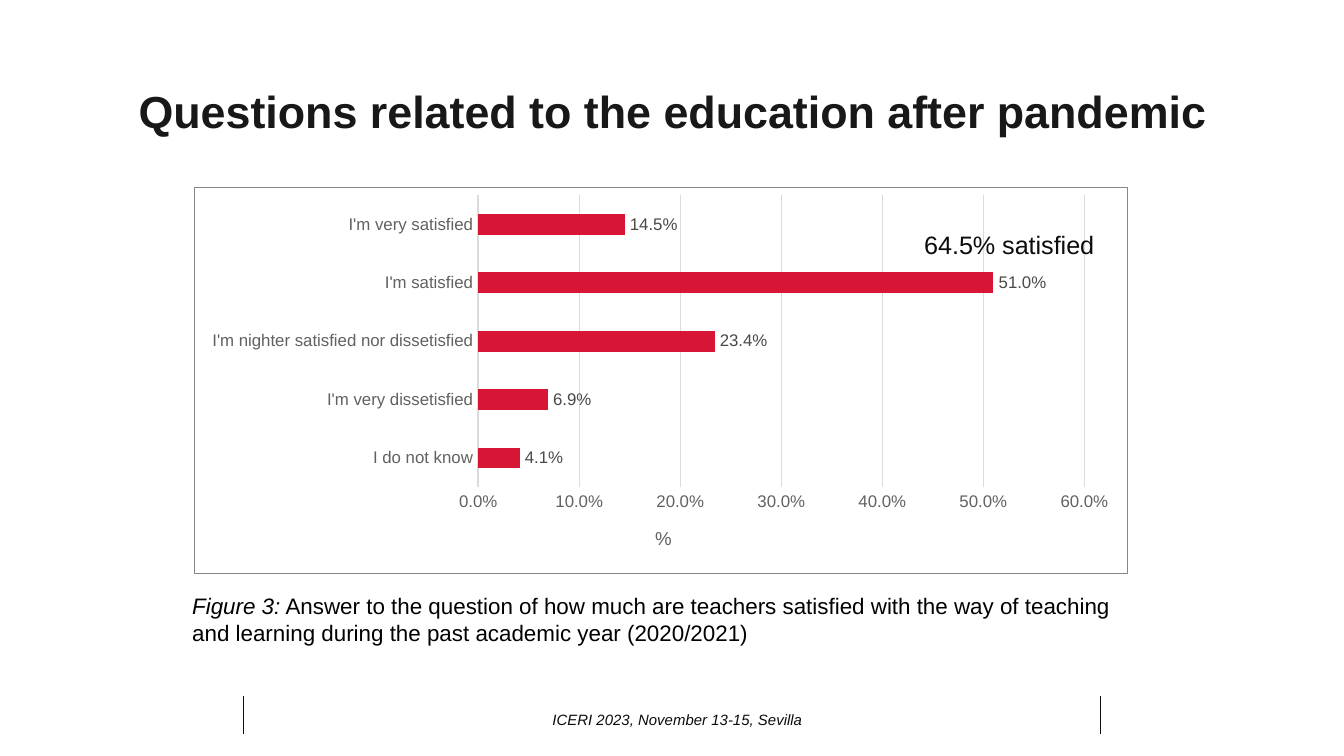
"""Build the slide on teacher satisfaction after the pandemic."""
from lxml import etree
from pptx import Presentation
from pptx.chart.data import CategoryChartData
from pptx.dml.color import RGBColor
from pptx.enum.chart import XL_CHART_TYPE as ChartType
from pptx.enum.chart import XL_LABEL_POSITION as LabelPosition
from pptx.enum.chart import XL_TICK_MARK as TickMark
from pptx.enum.shapes import MSO_CONNECTOR as Connector
from pptx.enum.text import MSO_ANCHOR as Anchor
from pptx.enum.text import PP_ALIGN as Align
from pptx.oxml import parse_xml
from pptx.oxml.ns import nsdecls, qn
from pptx.util import Pt

SCALE = 914400 / 134.4
INK, GREY, GRID = "0C0C0C", "616161", "DBDBDB"


def color(value):
    return RGBColor.from_string(value)


def write(shape, runs, box, size, ink=INK, bold=False, align=Align.LEFT, anchor=Anchor.TOP, spacing=None):
    shape.left, shape.top, shape.width, shape.height = [round(n * SCALE) for n in box]
    frame = shape.text_frame
    frame.word_wrap = True
    frame.vertical_anchor = anchor
    paragraph = frame.paragraphs[0]
    paragraph.alignment = align
    paragraph.line_spacing = spacing
    for text, italic in runs:
        run = paragraph.add_run()
        run.text = text
        font = run.font
        font.name, font.size, font.bold, font.italic = "Arial", Pt(size), bold, italic
        font.color.rgb = color(ink)


presentation = Presentation()
presentation.slide_width = round(1344 * SCALE)
presentation.slide_height = round(756 * SCALE)
slide = presentation.slides.add_slide(presentation.slide_layouts[5])
shapes = slide.shapes

for x in (243, 1101):
    line = shapes.add_connector(Connector.STRAIGHT, *[round(n * SCALE) for n in (x, 696, x, 734)])
    line.line.color.rgb = color(INK)
    line.line.width = Pt(0.5)
    etree.SubElement(line._element.spPr, qn("a:effectLst"))

write(shapes.title, [("Questions related to the education after pandemic", False)], (93, 40, 1159, 147), 24,
      ink="181818", bold=True, align=Align.CENTER, anchor=Anchor.MIDDLE, spacing=0.9)
write(shapes.add_textbox(0, 0, 0, 0), [("ICERI 2023, November 13-15, Sevilla", True)], (301, 700, 753, 40), 8,
      align=Align.CENTER, anchor=Anchor.MIDDLE)

answers = {
    "I do not know": 0.041,
    "I'm very dissetisfied": 0.069,
    "I'm nighter satisfied nor dissetisfied": 0.234,
    "I'm satisfied": 0.51,
    "I'm very satisfied": 0.145,
}
data = CategoryChartData(number_format="0.0%")
data.categories = list(answers)
data.add_series("Series 1", list(answers.values()))
chart_box = [round(n * SCALE) for n in (194, 187, 934, 387)]
chart = shapes.add_chart(ChartType.BAR_CLUSTERED, *chart_box, data).chart
chart.has_legend = False
chart.has_title = False
chart.font.name = "Arial"
chart.font.size = Pt(10)
chart.font.color.rgb = color(INK)

plot = chart.plots[0]
plot.gap_width = 182
plot.vary_by_categories = False
bars = plot.series[0].format.fill
bars.solid()
bars.fore_color.rgb = color("D71635")
plot.has_data_labels = True
labels = plot.data_labels
labels.show_value = True
labels.position = LabelPosition.OUTSIDE_END
labels.number_format = "0.0%"
labels.number_format_is_linked = False

category_axis, value_axis = chart.category_axis, chart.value_axis
for axis in (category_axis, value_axis):
    axis.major_tick_mark = axis.minor_tick_mark = TickMark.NONE
for font, ink in ((category_axis.tick_labels.font, GREY), (value_axis.tick_labels.font, GREY),
                  (labels.font, "494949")):
    font.name, font.size = "Arial", Pt(9)
    font.color.rgb = color(ink)
category_axis.has_major_gridlines = False
value_axis.has_major_gridlines = True
for stroke in (category_axis.format.line, value_axis.major_gridlines.format.line):
    stroke.color.rgb = color(GRID)
    stroke.width = Pt(0.75)
value_axis.format.line.fill.background()
value_axis.minimum_scale, value_axis.maximum_scale, value_axis.major_unit = 0, 0.6, 0.1
value_axis.tick_labels.number_format = "0.0%"
value_axis.tick_labels.number_format_is_linked = False

axis_title = value_axis.axis_title
axis_title.text_frame.text = "%"
title_font = axis_title.text_frame.paragraphs[0].runs[0].font
title_font.name, title_font.size, title_font.bold = "Arial", Pt(10), False
title_font.color.rgb = color(GREY)

chart_space = chart._chartSpace
plot_layout = '<c:layoutTarget val="inner"/><c:xMode val="edge"/><c:yMode val="edge"/>' \
    '<c:x val="0.304"/><c:y val="0.02"/><c:w val="0.65"/><c:h val="0.757"/>'
title_layout = '<c:xMode val="edge"/><c:yMode val="edge"/><c:x val="0.49"/><c:y val="0.87"/>'
for parent, index, content in ((chart_space.chart.plotArea, 0, plot_layout),
                               (axis_title._element, 1, title_layout)):
    for old in parent.findall(qn("c:layout")):
        parent.remove(old)
    parent.insert(index, parse_xml(
        f'<c:layout {nsdecls("c")}><c:manualLayout>{content}</c:manualLayout></c:layout>'))
chart_space.chart.addnext(parse_xml(
    f'<c:spPr {nsdecls("c", "a")}><a:noFill/><a:ln w="9525"><a:solidFill>'
    '<a:srgbClr val="868686"/></a:solidFill></a:ln></c:spPr>'))

caption = shapes.add_textbox(0, 0, 0, 0)
write(caption, [("Figure 3:", True),
                (" Answer to the question of how much are teachers satisfied with the way of teaching "
                 "and learning during the past academic year (2020/2021)", False)],
      (179, 586, 988, 67), 12, ink="000000")
write(shapes.add_textbox(0, 0, 0, 0), [("64.5% satisfied", False)], (911, 223, 231, 44), 13.5)

presentation.save("out.pptx")
